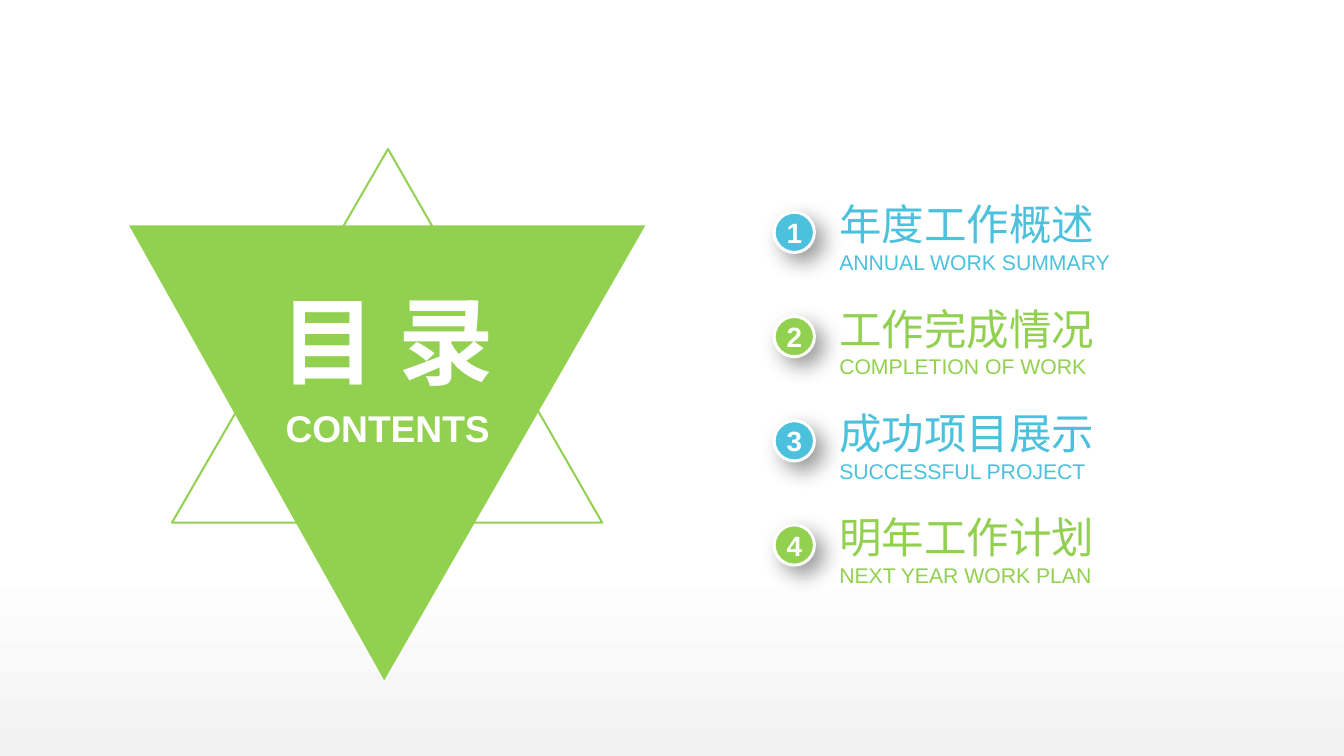
from lxml.etree import SubElement
from pptx import Presentation
from pptx.dml.color import RGBColor
from pptx.enum.lang import MSO_LANGUAGE_ID as Lang
from pptx.enum.shapes import MSO_SHAPE as Shape
from pptx.enum.text import MSO_ANCHOR as Anchor, MSO_AUTO_SIZE as AutoSize, PP_ALIGN as Align
from pptx.oxml.ns import qn
from pptx.util import Cm, Pt

TITLE, SUBTITLE = "目 录", "CONTENTS"
CHAPTERS = [
    ("年度工作概述", "ANNUAL WORK SUMMARY", "blue"),
    ("工作完成情况", "COMPLETION OF WORK", "green"),
    ("成功项目展示", "SUCCESSFUL PROJECT", "blue"),
    ("明年工作计划", "NEXT YEAR WORK PLAN", "green"),
]
COLORS = {"blue": "4BC1DD", "green": "92D050", "white": "FFFFFF",
          "grey": "F2F2F2", "black": "000000"}
FONT = "Arial"

# Lengths in centimetres
SLIDE_SIZE = (35.71, 20.09)
SOLID_TRIANGLE = [(3.43, 5.99), (17.15, 5.99), (10.21, 18.08)]
OUTLINE_TRIANGLE = [(10.31, 3.96), (16, 13.89), (4.57, 13.89)]
TITLE_BOX = (6.65, 7.49, 7.29, 3.07)
SUBTITLE_BOX = (7.06, 10.77, 6.48, 1.19)
BADGE_LEFT, BADGE_TOP, BADGE_SIZE = 20.57, 5.64, 1.07
CHAPTER_LEFT, CHAPTER_TOP, CHAPTER_WIDTH, CHAPTER_HEIGHT = 22.3, 5.26, 7.49, 2.06
CHAPTER_PITCH = 2.77


def rgb(color):
    return RGBColor.from_string(COLORS[color])


def cm(*lengths):
    return [Cm(length) for length in lengths]


def write(shape, lines, color, bold=False, align=Align.LEFT, anchor=Anchor.MIDDLE):
    """Fill the shape with one paragraph per (text, size) line."""
    frame = shape.text_frame
    frame.margin_left = frame.margin_right = frame.margin_top = frame.margin_bottom = 0
    frame.auto_size = AutoSize.NONE
    frame.word_wrap = True
    frame.vertical_anchor = anchor
    for index, (text, size) in enumerate(lines):
        paragraph = frame.add_paragraph() if index else frame.paragraphs[0]
        paragraph.alignment = align
        run = paragraph.add_run()
        run.text = text
        font = run.font
        font.name, font.size, font.bold = FONT, Pt(size), bold
        font.color.rgb = rgb(color)
        font.language_id = Lang.ENGLISH_US if text.isascii() else Lang.SIMPLIFIED_CHINESE


def add_triangle(shapes, corners):
    start, *others = [cm(*corner) for corner in corners]
    builder = shapes.build_freeform(*start)
    builder.add_line_segments(others, close=True)
    triangle = builder.convert_to_shape()
    triangle.shadow.inherit = False
    return triangle


def cast_shadow(shape):
    shape.shadow.inherit = False
    effects = shape.element.spPr.find(qn("a:effectLst"))
    shadow = SubElement(effects, qn("a:outerShdw"), blurRad=str(Pt(16)), dist=str(Pt(9)),
                        dir=str(45 * 60000), algn="tl", rotWithShape="0")
    tint = SubElement(shadow, qn("a:srgbClr"), val=COLORS["black"])
    SubElement(tint, qn("a:alpha"), val="40000")


def add_chapter(shapes, index, heading, caption, color):
    offset = index * CHAPTER_PITCH
    badge = shapes.add_shape(
        Shape.OVAL, *cm(BADGE_LEFT, BADGE_TOP + offset, BADGE_SIZE, BADGE_SIZE))
    badge.fill.solid()
    badge.fill.fore_color.rgb = rgb(color)
    badge.line.color.rgb = rgb("white")
    badge.line.width = Pt(2.25)
    cast_shadow(badge)
    write(badge, [(str(index + 1), 21)], "white", bold=True, align=Align.CENTER)

    entry = shapes.add_textbox(
        *cm(CHAPTER_LEFT, CHAPTER_TOP + offset, CHAPTER_WIDTH, CHAPTER_HEIGHT))
    write(entry, [(heading, 32), (caption, 16)], color)


def main():
    deck = Presentation()
    deck.slide_width, deck.slide_height = cm(*SLIDE_SIZE)
    slide = deck.slides.add_slide(deck.slide_layouts[5])
    shapes = slide.shapes

    backdrop = slide.background.fill
    backdrop.gradient()
    backdrop.gradient_angle = 90
    for stop, position, color in zip(backdrop.gradient_stops, (0, 0.26), ("grey", "white")):
        stop.position = position
        stop.color.rgb = rgb(color)

    solid = add_triangle(shapes, SOLID_TRIANGLE)
    solid.fill.solid()
    solid.fill.fore_color.rgb = rgb("green")
    solid.line.fill.background()
    outline = add_triangle(shapes, OUTLINE_TRIANGLE)
    outline.fill.background()
    outline.line.color.rgb = rgb("green")
    outline.line.width = Pt(1.5)

    for index, chapter in enumerate(CHAPTERS):
        add_chapter(shapes, index, *chapter)

    title = shapes.title
    title.left, title.top, title.width, title.height = cm(*TITLE_BOX)
    write(title, [(TITLE, 72)], "white", bold=True, align=Align.CENTER)
    # The title has to lie in front of the solid triangle
    title.element.getparent().append(title.element)
    subtitle = shapes.add_textbox(*cm(*SUBTITLE_BOX))
    write(subtitle, [(SUBTITLE, 28)], "white", bold=True, align=Align.CENTER, anchor=Anchor.TOP)

    deck.save("out.pptx")


if __name__ == "__main__":
    main()
